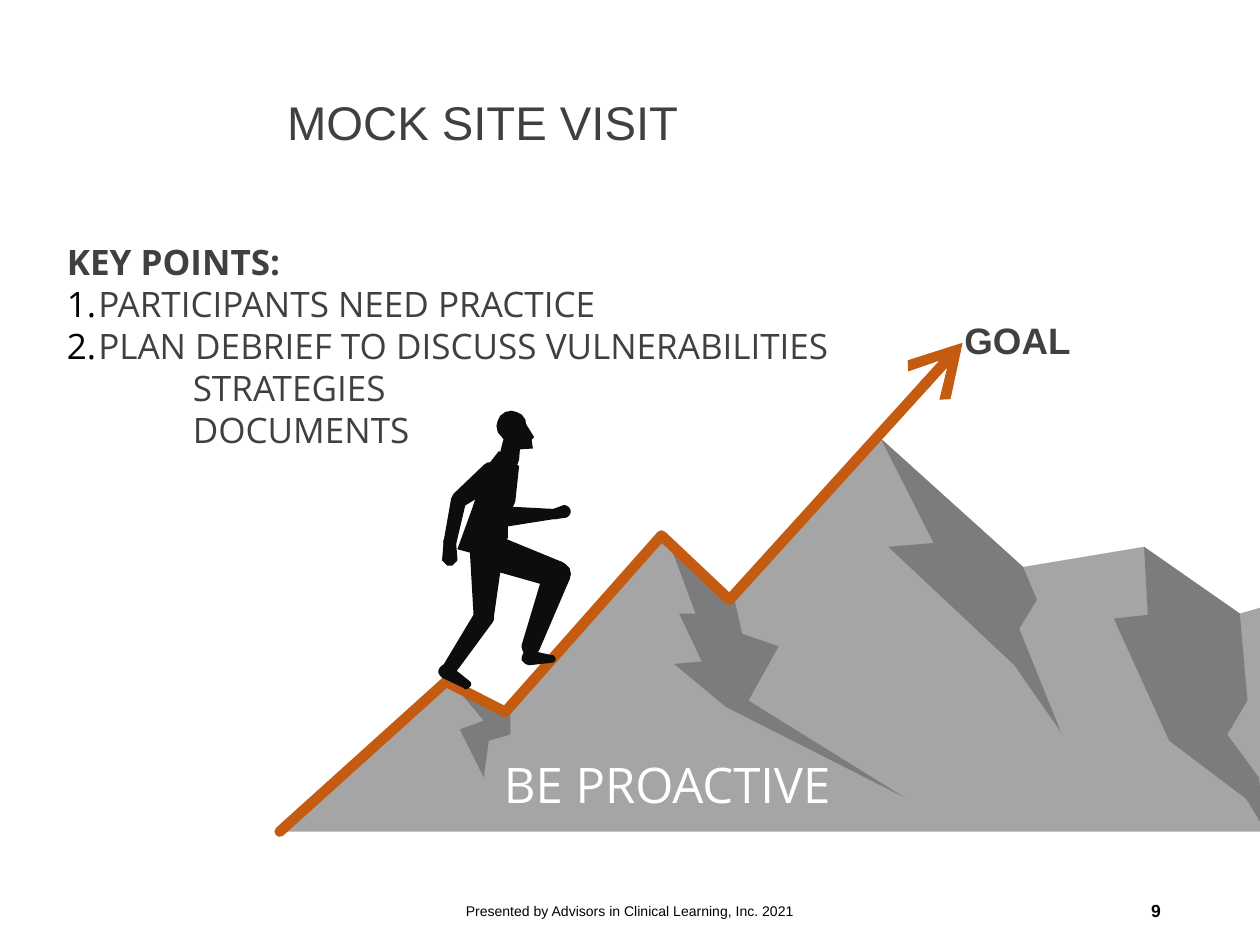
import math
from dataclasses import dataclass
from itertools import pairwise

import pptx
import pptx.dml.color
import pptx.enum.text
import pptx.oxml.ns
import pptx.util
from lxml import etree

PX = 9144  # EMU per px, 100 px to the inch
CAP_STEPS = 8  # straight pieces in each rounded end

RGB = pptx.dml.color.RGBColor
ROCK = RGB(0xA5, 0xA5, 0xA5)
SHADE = RGB(0x7C, 0x7C, 0x7C)
TRAIL = RGB(0xC5, 0x5A, 0x11)
CLIMBER = RGB(0x0D, 0x0D, 0x0D)
DARK = RGB(0x40, 0x40, 0x40)
BLACK = RGB(0, 0, 0)
WHITE = RGB(0xFF, 0xFF, 0xFF)

ALIGN = pptx.enum.text.PP_ALIGN
MIDDLE = pptx.enum.text.MSO_ANCHOR.MIDDLE
TOP = pptx.enum.text.MSO_ANCHOR.TOP

Point = tuple[int, int]


@dataclass
class Facet:
    """The shaded side of a peak, from its summit down to the next valley."""
    peak: Point
    valley: Point
    left_edge: list[Point]
    foot: Point
    right_edge: list[Point]


@dataclass
class Joint:
    x: int
    y: int
    radius: int


@dataclass
class Line:
    text: str
    bold: bool = False
    indent: int = 0
    numbered: bool = False


@dataclass
class Label:
    box: tuple[int, int, int, int]
    lines: list[Line]
    font: str
    size: int
    color: RGB
    align: ALIGN = ALIGN.LEFT
    anchor: MIDDLE = MIDDLE
    side_inset: int = 10
    wrap: bool = True
    spacing: float = 1.0


# The ridge is shared: it bounds the rock, the facets hang from it, the trail follows it.
BASE_LEFT, BASE_RIGHT = (222, 660), (1005, 660)
PEAK_1, VALLEY_1 = (358, 541), (405, 565)
PEAK_2, VALLEY_2 = (529, 425), (583, 476)
PEAK_3, VALLEY_3 = (699, 348), (812, 450)
PEAK_4, VALLEY_4 = (908, 434), (984, 487)
RIDGE_END = (1005, 481)
CLIMBED = [PEAK_1, VALLEY_1, PEAK_2, VALLEY_2]
RIDGE = [*CLIMBED, PEAK_3, VALLEY_3, PEAK_4, VALLEY_4, RIDGE_END]
TRAIL_SHIFT = -4
GOAL_TIP = (764, 272)

FACETS = [
    Facet(PEAK_3, VALLEY_3, [(741, 431), (705, 434), (805, 528)], (842, 581),
          [(809, 499), (823, 476)]),
    Facet(PEAK_2, VALLEY_2, [(552, 487), (539, 487), (557, 525), (535, 527), (576, 561)],
          (718, 633), [(594, 556), (618, 513), (589, 503)]),
    Facet(PEAK_1, VALLEY_1, [(384, 572), (365, 579)], (384, 617), [(388, 588), (405, 583)]),
    Facet(PEAK_4, VALLEY_4, [(911, 488), (884, 491), (928, 588), (989, 634)], BASE_RIGHT,
          [(999, 617), (974, 583), (990, 556)]),
]

# Each limb is a chain of joints; every pair of neighbours becomes one rounded bone.
LIMBS = {
    "back shoe": [Joint(354, 533, 6), Joint(370, 543, 4)],
    "front shoe": [Joint(420, 522, 6), Joint(438, 523, 3)],
    "back leg": [Joint(386, 440, 13), Joint(384, 490, 8), Joint(358, 529, 6)],
    "front leg": [Joint(390, 438, 14), Joint(442, 456, 11), Joint(421, 514, 7)],
    "front arm": [Joint(402, 410, 8), Joint(440, 408, 4), Joint(448, 406, 5)],
    "back arm": [Joint(390, 377, 10), Joint(364, 397, 6), Joint(357, 431, 5), Joint(357, 443, 6)],
    "neck": [Joint(406, 352, 7), Joint(404, 364, 8)],
    "head": [Joint(406, 338, 12), Joint(409, 345, 10)],
}
PROFILE = [(416, 334), (424, 347), (422, 349), (423, 356), (408, 357)]
JACKET = [(396, 358), (412, 370), (409, 398), (403, 412), (403, 427), (393, 444),
          (363, 436), (375, 403), (385, 372)]

TITLE = Label((218, 27, 714, 145), [Line("MOCK SITE VISIT")], "Arial", 27, DARK, spacing=0.9)
LABELS = [
    Label((400, 594, 263, 57), [Line("BE PROACTIVE")], "Open Sans", 28, WHITE, side_inset=0),
    Label((53, 186, 628, 246),
          [Line("KEY POINTS:", bold=True),
           Line("PARTICIPANTS NEED PRACTICE", indent=25, numbered=True),
           Line("PLAN DEBRIEF TO DISCUSS VULNERABILITIES", indent=25, numbered=True),
           Line("STRATEGIES", indent=100),
           Line("DOCUMENTS", indent=100)],
          "Open Sans", 20, DARK, anchor=TOP, side_inset=0),
    Label((755, 247, 105, 45), [Line("GOAL", bold=True)], "Arial", 21, DARK,
          ALIGN.CENTER, TOP, wrap=False),
    Label((331, 703, 338, 40), [Line("Presented by Advisors in Clinical Learning, Inc. 2021")],
          "Arial", 8, BLACK, ALIGN.CENTER),
    Label((706, 703, 225, 40), [Line("9", bold=True)], "Arial", 10, BLACK, ALIGN.RIGHT),
]


def add_element(parent, tag: str, **attributes: str):
    return etree.SubElement(parent, pptx.oxml.ns.qn(tag), **attributes)


def trace(slide, points: list[Point], closed: bool):
    builder = slide.shapes.build_freeform(*points[0], scale=PX)
    builder.add_line_segments(points[1:], close=closed)
    shape = builder.convert_to_shape()
    shape.shadow.inherit = False
    return shape


def draw_outline(slide, points: list[Point], color: RGB) -> None:
    shape = trace(slide, points, closed=True)
    shape.fill.solid()
    shape.fill.fore_color.rgb = color
    shape.line.fill.background()


def draw_mountains(slide) -> None:
    draw_outline(slide, [BASE_LEFT, *RIDGE, BASE_RIGHT], ROCK)
    for facet in FACETS:
        draw_outline(slide, [facet.valley, facet.peak, *facet.left_edge, facet.foot,
                             *facet.right_edge], SHADE)


def draw_trail(slide) -> None:
    climb = [(x + TRAIL_SHIFT, y) for x, y in CLIMBED]
    trail = trace(slide, [BASE_LEFT, *climb, GOAL_TIP], closed=False)
    trail.fill.background()
    trail.line.color.rgb = TRAIL
    trail.line.width = pptx.util.Pt(6)
    stroke = trail._element.spPr.find(pptx.oxml.ns.qn("a:ln"))
    stroke.set("cap", "rnd")
    add_element(stroke, "a:round")
    add_element(stroke, "a:tailEnd", type="arrow", w="lg", len="lg")


def bone_outline(start: Joint, end: Joint) -> list[Point]:
    """Join a half circle round each joint into one tapered, round-ended outline."""
    heading = math.atan2(end.y - start.y, end.x - start.x)
    points = []
    for joint, outward in ((end, heading), (start, heading + math.pi)):
        for step in range(CAP_STEPS + 1):
            angle = outward + math.pi * (step / CAP_STEPS - 0.5)
            points.append((joint.x + joint.radius * math.cos(angle),
                           joint.y + joint.radius * math.sin(angle)))
    return points


def draw_climber(slide) -> None:
    for joints in LIMBS.values():
        for start, end in pairwise(joints):
            draw_outline(slide, bone_outline(start, end), CLIMBER)
    for outline in (PROFILE, JACKET):
        draw_outline(slide, outline, CLIMBER)


def indent_paragraph(paragraph, line: Line) -> None:
    properties = paragraph._p.get_or_add_pPr()
    properties.set("marL", str(line.indent * PX))
    properties.set("indent", str(-line.indent * PX if line.numbered else 0))
    if line.numbered:
        number_color = add_element(properties, "a:buClr")
        add_element(number_color, "a:srgbClr", val=str(BLACK))
        add_element(properties, "a:buAutoNum", type="arabicPeriod")


def draw_label(slide, label: Label) -> None:
    box = slide.shapes.add_textbox(*(length * PX for length in label.box))
    frame = box.text_frame
    frame.word_wrap = label.wrap
    frame.vertical_anchor = label.anchor
    frame.margin_left = frame.margin_right = label.side_inset * PX
    frame.margin_top = frame.margin_bottom = 5 * PX
    for index, line in enumerate(label.lines):
        paragraph = frame.add_paragraph() if index else frame.paragraphs[0]
        paragraph.alignment = label.align
        paragraph.line_spacing = label.spacing
        indent_paragraph(paragraph, line)
        run = paragraph.add_run()
        run.text = line.text
        run.font.name = label.font
        run.font.size = pptx.util.Pt(label.size)
        run.font.bold = line.bold
        run.font.color.rgb = label.color


def main() -> None:
    deck = pptx.Presentation()
    deck.slide_width, deck.slide_height = 1000 * PX, 750 * PX
    slide = deck.slides.add_slide(deck.slide_layouts[6])
    draw_label(slide, TITLE)
    draw_mountains(slide)
    draw_trail(slide)
    draw_climber(slide)
    for label in LABELS:
        draw_label(slide, label)
    deck.save("out.pptx")


if __name__ == "__main__":
    main()
